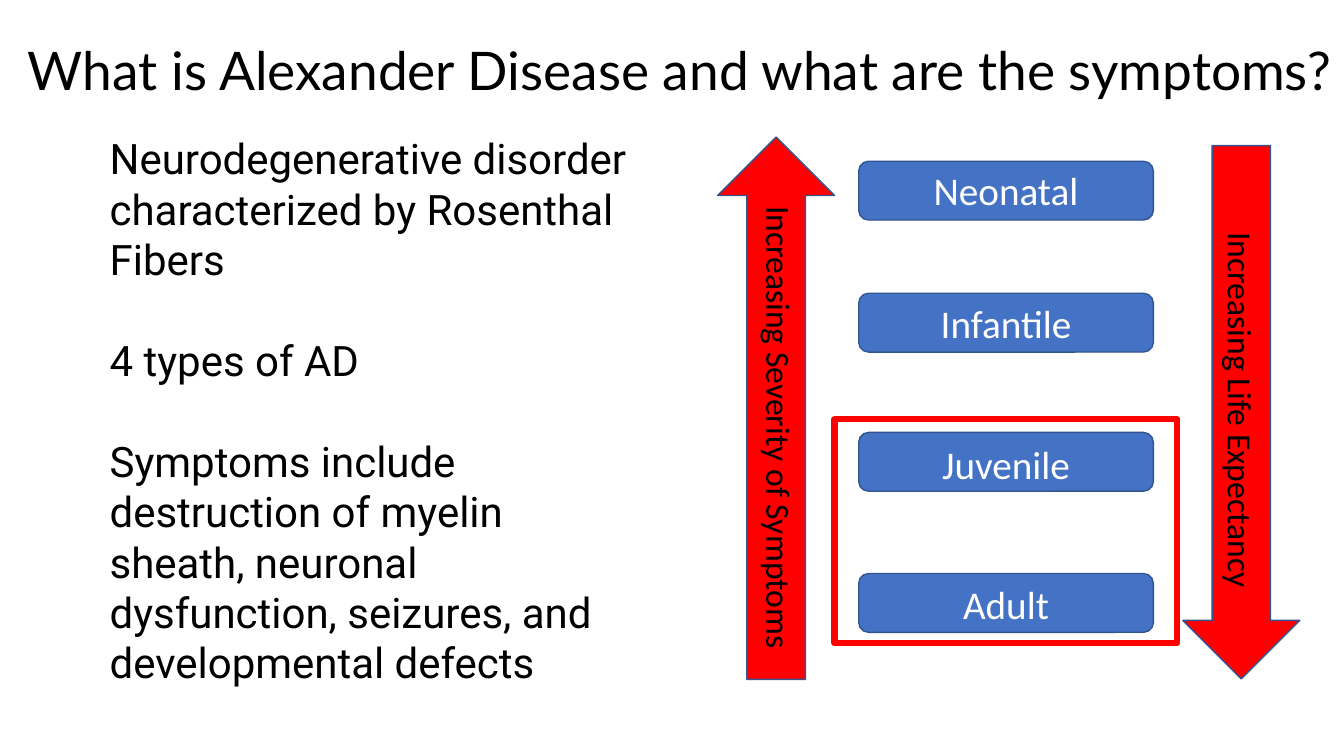
from dataclasses import dataclass

from pptx import Presentation
from pptx.dml.color import RGBColor
from pptx.enum.shapes import MSO_SHAPE
from pptx.enum.text import MSO_ANCHOR, MSO_AUTO_SIZE, PP_ALIGN
from pptx.util import Pt


@dataclass(frozen=True)
class Theme:
    black: RGBColor = RGBColor(0x00, 0x00, 0x00)
    white: RGBColor = RGBColor(0xFF, 0xFF, 0xFF)
    blue: RGBColor = RGBColor(0x44, 0x72, 0xC4)
    outline: RGBColor = RGBColor(0x32, 0x54, 0x91)
    red: RGBColor = RGBColor(0xFF, 0x00, 0x00)
    title_font: str = "Lato"
    body_font: str = "Roboto"
    label_font: str = "Calibri"
    title_size: int = 38
    body_size: int = 30
    type_size: int = 28
    arrow_size: int = 24


THEME = Theme()

BODY = [
    "Neurodegenerative disorder characterized by Rosenthal Fibers",
    "4 types of AD",
    "Symptoms include destruction of myelin sheath, neuronal dysfunction, "
    "seizures, and developmental defects",
]
# Disease type, top of its pill, top of its label
TYPES = [
    ("Neonatal", 115.2, 115.2),
    ("Infantile", 209.5, 210.2),
    ("Juvenile", 308.9, 311),
    ("Adult", 409.7, 411.1),
]


def write(frame, *texts, font, size, color=THEME.black, align=PP_ALIGN.LEFT,
          anchor=MSO_ANCHOR.TOP, gap=0, line_spacing=1.0):
    """Fill a text frame with one paragraph per text, gap points apart."""
    frame.word_wrap = True
    frame.auto_size = MSO_AUTO_SIZE.NONE
    frame.vertical_anchor = anchor
    for index, text in enumerate(texts):
        para = frame.add_paragraph() if index else frame.paragraphs[0]
        para.alignment = align
        para.line_spacing = line_spacing
        para.space_before = Pt(gap if index else 0)
        span = para.add_run()
        span.text = text
        span.font.name = font
        span.font.size = Pt(size)
        span.font.color.rgb = color


def add_text(page, area, *texts, rotation=0, **style):
    box = page.shapes.add_textbox(*map(Pt, area))
    box.rotation = rotation
    write(box.text_frame, *texts, **style)


def add_block(page, kind, area, fill=None, line=THEME.outline, weight=1, rotation=0):
    block = page.shapes.add_shape(kind, *map(Pt, area))
    block.shadow.inherit = False
    block.rotation = rotation
    if fill is None:
        block.fill.background()
    else:
        block.fill.solid()
        block.fill.fore_color.rgb = fill
    block.line.color.rgb = line
    block.line.width = Pt(weight)


def add_title(page, text):
    title = page.shapes.title
    title.left, title.top, title.width, title.height = map(Pt, (5, 0, 961.2, 104.4))
    write(title.text_frame, text, font=THEME.title_font, size=THEME.title_size,
          align=PP_ALIGN.CENTER, anchor=MSO_ANCHOR.MIDDLE, line_spacing=0.9)


def add_type(page, name, pill_top, label_top):
    add_block(page, MSO_SHAPE.ROUNDED_RECTANGLE, (613.4, pill_top, 210.5, 42),
              fill=THEME.blue)
    add_text(page, (596.2, label_top, 244.8, 41.2), name, font=THEME.label_font,
             size=THEME.type_size, color=THEME.white, align=PP_ALIGN.CENTER)


def add_trend(page, text, arrow_area, arrow_rotation, label_area):
    add_block(page, MSO_SHAPE.RIGHT_ARROW, arrow_area, fill=THEME.red,
              rotation=arrow_rotation)
    add_text(page, label_area, text, rotation=90, font=THEME.label_font,
             size=THEME.arrow_size)


def main():
    deck = Presentation()
    deck.slide_width, deck.slide_height = Pt(960), Pt(540)
    page = deck.slides.add_slide(deck.slide_layouts[5])

    add_title(page, "What is Alexander Disease and what are the symptoms?")

    # Four types, from earliest to latest onset
    for name, pill_top, label_top in TYPES:
        add_type(page, name, pill_top, label_top)

    # Trend arrows on either side
    add_trend(page, "Increasing Severity of Symptoms",
              (360.7, 249.8, 387.4, 83.5), 270, (384.5, 294.5, 344.9, 36))
    add_trend(page, "Increasing Life Expectancy",
              (696.2, 252.7, 380.9, 83.5), 90, (714.2, 313.2, 344.9, 36))

    # Description
    add_text(page, (71.3, 91.4, 393.1, 406.8), *BODY, font=THEME.body_font,
             size=THEME.body_size, gap=36)

    # Frame around the later-onset types
    add_block(page, MSO_SHAPE.RECTANGLE, (596.2, 299.5, 244.8, 159.8),
              line=THEME.red, weight=4.5)

    deck.save("out.pptx")


if __name__ == "__main__":
    main()
